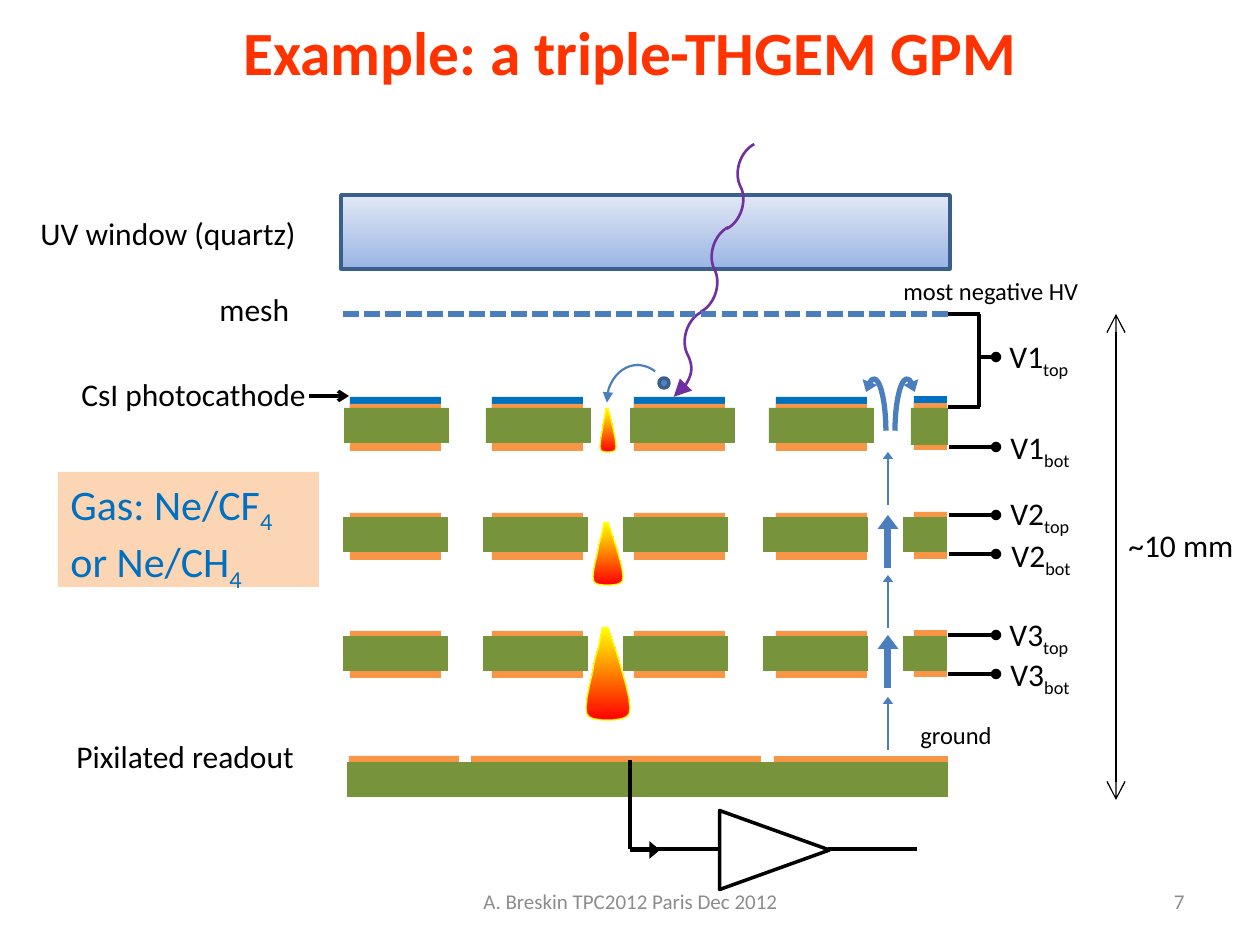
import lxml.etree
import pptx
import pptx.dml.color
import pptx.enum.dml
import pptx.enum.shapes
import pptx.enum.text
import pptx.oxml.ns
import pptx.util

SHAPE = pptx.enum.shapes.MSO_SHAPE
CONNECTOR = pptx.enum.shapes.MSO_CONNECTOR
ALIGN = pptx.enum.text.PP_ALIGN
ANCHOR = pptx.enum.text.MSO_ANCHOR
SQUARE_DASH = pptx.enum.dml.MSO_LINE.SQUARE_DOT
EMU_PER_PX = 914400 / 126

COLORS = {
    "title": "FF3300", "black": "000000", "white": "FFFFFF", "footer": "8C8C8C",
    "electrode": "F79646", "board": "77933C", "photocathode": "0070C0",
    "photon": "7030A0", "field": "4B7EBC", "electron": "4F81BD", "edge": "3A5F8C",
    "window_low": "9AB5E4", "window_high": "E1E8F5",
    "flame_hot": "FF0000", "flame_tip": "FFFF00", "gas": "FCD5B5",
}

# Avalanche outline, tip up, in a unit square: start point, then cubic segments.
FLAME_TIP = (0.5, 0)
FLAME_CURVES = [
    [(0.54, 0.07), (0.6, 0.14), (0.66, 0.22)], [(0.71, 0.3), (0.77, 0.38), (0.83, 0.49)],
    [(0.89, 0.58), (1, 0.77), (1, 0.86)], [(1, 0.95), (0.94, 0.96), (0.8, 0.98)],
    [(0.66, 1), (0.31, 1), (0.17, 0.98)], [(0.06, 0.96), (0, 0.95), (0, 0.86)],
    [(0, 0.77), (0.09, 0.59), (0.14, 0.5)], [(0.17, 0.39), (0.23, 0.28), (0.29, 0.2)],
    [(0.31, 0.12), (0.37, 0.03), (0.37, 0)],
]


def px(value):
    return pptx.util.Emu(round(value * EMU_PER_PX))


def rgb(name):
    return pptx.dml.color.RGBColor.from_string(COLORS[name])


def set_values(target, values):
    for key, value in values.items():
        setattr(target, key, value)


def flame_points(steps=3):
    points = [FLAME_TIP]
    for b, c, d in FLAME_CURVES:
        a = points[-1]
        for t in (step / steps for step in range(1, steps + 1)):
            weights = ((1 - t) ** 3, 3 * t * (1 - t) ** 2, 3 * t * t * (1 - t), t ** 3)
            points.append(tuple(sum(w * p[axis] for w, p in zip(weights, (a, b, c, d)))
                                for axis in (0, 1)))
    return points


class Diagram:
    font = "Calibri"

    def __init__(self, slide):
        self.slide = slide
        self.shapes = slide.shapes

    def open_group(self):
        self.shapes = self.slide.shapes.add_group_shape().shapes

    def close_group(self):
        self.shapes = self.slide.shapes

    def stroke(self, item, color, width, dash=None, head=None, tail=None, tip=("med", "med")):
        """Style a line; tip holds the width and the length of its arrowheads."""
        set_values(item.line, {"width": pptx.util.Pt(width), "dash_style": dash})
        item.line.color.rgb = rgb(color)
        ln = item.line._get_or_add_ln()
        for end, kind in (("a:headEnd", head), ("a:tailEnd", tail)):
            if kind:
                lxml.etree.SubElement(ln, pptx.oxml.ns.qn(end), type=kind, w=tip[0], len=tip[1])

    def paint(self, item, fill=None, gradient=None, angle=90):
        item.shadow.inherit = False
        if gradient:
            item.fill.gradient()
            item.fill.gradient_angle = angle
            for stop, name in zip(item.fill.gradient_stops, gradient):
                stop.color.rgb = rgb(name)
        elif fill:
            item.fill.solid()
            item.fill.fore_color.rgb = rgb(fill)
        else:
            item.fill.background()

    def shape(self, kind, box, fill=None, edge=None, gradient=None, rotation=0):
        item = self.shapes.add_shape(kind, *map(px, box))
        self.paint(item, fill, gradient)
        item.rotation = rotation
        if edge:
            self.stroke(item, edge, 2)
        else:
            item.line.fill.background()
        return item

    def rect(self, box, fill):
        return self.shape(SHAPE.RECTANGLE, box, fill)

    def arc(self, box, adjustments, width, flip=False, **ends):
        item = self.shape(SHAPE.ARC, box)
        for i, value in enumerate(adjustments):
            item.adjustments[i] = value
        if flip:
            item._element.spPr.xfrm.set("flipH", "1")
        self.stroke(item, "field", width, **ends)

    def line(self, x1, y1, x2, y2, color="black", width=2, kind=CONNECTOR.STRAIGHT,
             rotation=0, **style):
        item = self.shapes.add_connector(kind, px(x1), px(y1), px(x2), px(y2))
        self.stroke(item, color, width, **style)
        properties = item._element.spPr
        lxml.etree.SubElement(properties, pptx.oxml.ns.qn("a:effectLst"))
        if rotation:
            properties.xfrm.set("rot", str(rotation * 60000))

    def flame(self, x, y, width, height):
        """Draw the outline upside down, then turn it so that the tip is on top."""
        points = [(px(x + width * (1 - u)), px(y + height * (1 - v)))
                  for u, v in flame_points()]
        outline = self.shapes.build_freeform(*points[0], scale=1.0)
        outline.add_line_segments(points[1:], close=True)
        item = outline.convert_to_shape()
        item.rotation = 180
        self.paint(item, gradient=("flame_hot", "flame_tip"), angle=270)
        self.stroke(item, "flame_tip", 0.75)

    def text(self, box, pieces, size=18, color="black", bold=False, fill=None,
             align=ALIGN.LEFT, anchor=ANCHOR.TOP):
        """Write pieces in one paragraph; every second piece is a subscript."""
        item = self.shapes.add_textbox(*map(px, box))
        if fill:
            self.paint(item, fill)
        set_values(item.text_frame, {"word_wrap": True, "vertical_anchor": anchor})
        paragraph = item.text_frame.paragraphs[0]
        paragraph.alignment = align
        for i, piece in enumerate(pieces):
            run = paragraph.add_run()
            run.text = piece
            set_values(run.font, {"name": self.font, "size": pptx.util.Pt(size), "bold": bold})
            run.font.color.rgb = rgb(color)
            if i % 2:
                run.font._element.set("baseline", "-25000")

    def pads(self, y, height, fill, small_y):
        for column in range(4):
            self.rect((350 + 142 * column, y, 91, height), fill)
        self.rect((914, small_y, 33, height), fill)

    def thgem(self, y, board_y):
        self.pads(y, 47, "electrode", y - 1)
        self.line(343, board_y, 947, board_y, "board", 20, dash=SQUARE_DASH)


def main():
    deck = pptx.Presentation()
    set_values(deck, {"slide_width": px(1260), "slide_height": px(945)})
    d = Diagram(deck.slides.add_slide(deck.slide_layouts[6]))

    d.text((63, 8, 1134, 97), ["Example: a triple-THGEM GPM"], 35.1, "title", True,
           align=ALIGN.CENTER)

    # Amplifier, readout board and window
    d.shape(SHAPE.ISOSCELES_TRIANGLE, (735, 795, 79, 110), "white", "black", rotation=90)
    d.open_group()
    for x, width, height in ((349, 110, 10), (471, 290, 11), (774, 174, 8)):
        d.rect((x, 756, width, height), "electrode")
    d.line(347, 780, 948, 780, "board", 20)
    d.shape(SHAPE.RECTANGLE, (341, 195, 609, 74), edge="edge",
            gradient=("window_low", "window_high"))

    # First THGEM with its photocathode, then the second
    d.pads(397, 16, "photocathode", 396)
    d.pads(404, 47, "electrode", 403)
    for x in (344, 486, 630, 769):
        d.rect((x, 408, 105, 35), "board")
    d.rect((911, 408, 37, 37), "board")
    d.thgem(513, 535)

    # Photon, photoelectron and avalanches
    for x, y, tip in ((709, 155, None), (683, 238, None), (656, 323, "triangle")):
        d.line(x, y + 63, x + 63, y, "photon", 1.5, CONNECTOR.CURVE, 153, tail=tip,
               tip=("lg", "lg"))
    d.shape(SHAPE.OVAL, (659, 378, 10, 10), "electron", "edge")
    d.arc((609, 365, 55, 49), (162, 189.53), 1.25)
    d.arc((607, 365, 62, 73), (162, 1.27), 1.25, flip=True, tail="triangle")
    for box in ((600, 408, 16, 44), (593, 522, 30, 63), (586, 627, 44, 93)):
        d.flame(*box)
    d.line(343, 314, 948, 314, "field", 3, dash=SQUARE_DASH)
    d.thgem(631, 654)

    # Signal path
    d.line(630, 760, 630, 849)
    d.line(719, 849, 630, 849)
    d.line(917, 849, 828, 849)
    d.line(630, 850, 660, 850, tail="triangle", tip=("lg", "med"))

    # Labels
    for x, y, width, label in ((28, 208, 294, "UV window (quartz)"), (207, 284, 105, "mesh"),
                               (69, 369, 253, "CsI photocathode"),
                               (64, 731, 253, "Pixilated readout"), (1116, 520, 137, "~10 mm")):
        d.text((x, y, width, 50), [label])
    d.text((58, 472, 261, 115), ["Gas: Ne/CF", "4", " or Ne/CH", "4"], 24, "photocathode",
           fill="gas")
    d.text((891, 270, 262, 43), ["most negative HV"], 14)
    d.text((908, 714, 100, 43), ["ground"], 14)
    d.line(309, 396, 349, 396, tail="arrow")
    d.line(1116, 314, 1116, 800, width=0.75, head="arrow", tail="arrow", tip=("lg", "lg"))

    # Back-flowing ions
    for x, flip in ((862, False), (895, True)):
        d.arc((x, 379, 24, 107), (155.46, 210.98), 3, flip, head="triangle", tip=("med", "sm"))
    for i, y in enumerate((452, 515, 575, 635, 697)):
        d.line(888, y + 53, 888, y, "field", 4 if i % 2 else 0.75, tail="triangle",
               tip=("med", "sm"))

    # Voltage terminals
    for stage, side, x, label_y, start, y in (
            (1, "top", 997, 331, 979, 357), (1, "bot", 998, 422, 949, 447),
            (2, "top", 998, 488, 949, 515), (2, "bot", 999, 530, 949, 554),
            (3, "top", 997, 609, 948, 635), (3, "bot", 998, 649, 948, 674)):
        d.text((x, label_y, 97, 50), [f"V{stage}", side])
        d.line(start, y, 996, y, tail="oval")
    for y in (314, 407):
        d.line(948, y, 980, y)
    d.line(979, 314, 979, 407)
    d.close_group()

    for box, note, align in (((903, 876, 294, 50), "7", ALIGN.RIGHT),
                             ((431, 876, 399, 50), "A. Breskin TPC2012 Paris Dec 2012",
                              ALIGN.CENTER)):
        d.text(box, [note], 12, "footer", align=align, anchor=ANCHOR.MIDDLE)

    deck.save("out.pptx")


if __name__ == "__main__":
    main()
